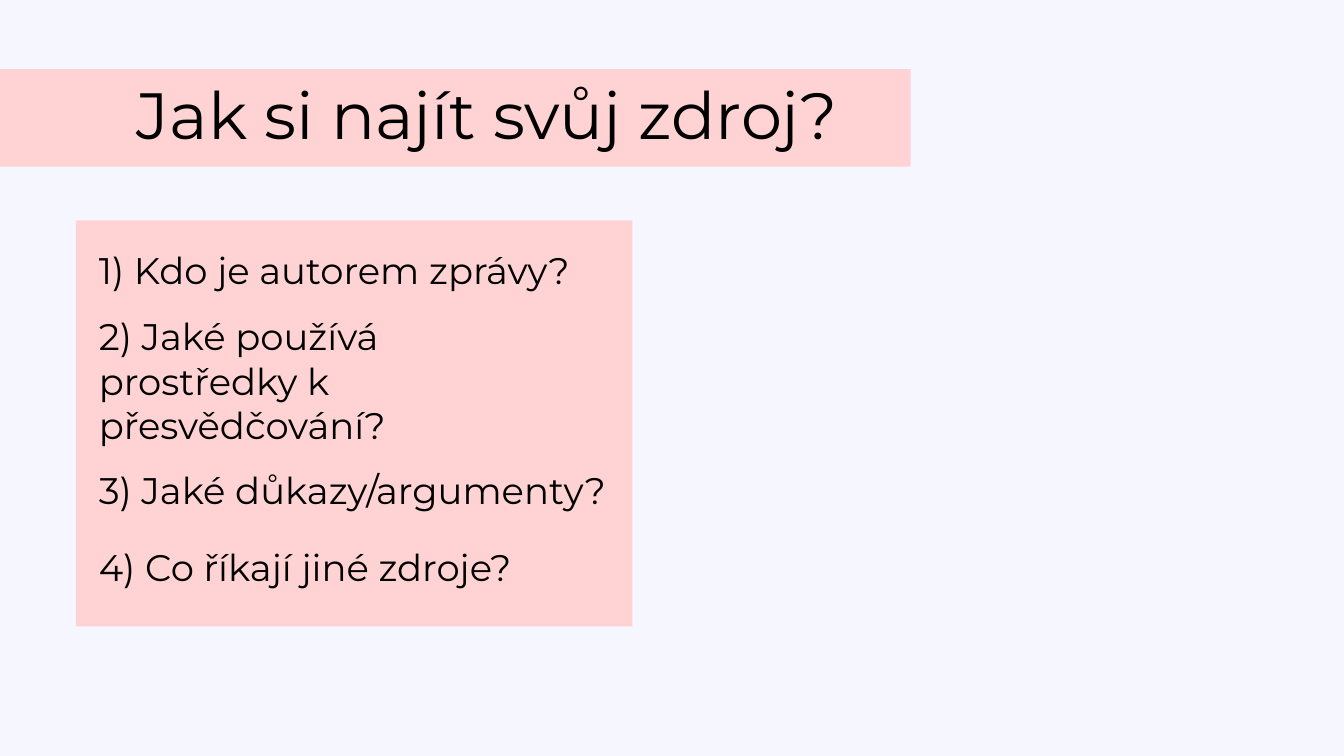
"""Builds a slide with four questions for judging a news source."""
from pptx import Presentation
from pptx import util as u
from pptx.dml.color import RGBColor
from pptx.enum import shapes, text

PAPER = RGBColor(0xF5, 0xF6, 0xFF)
PINK = RGBColor(0xFF, 0xD3, 0xD3)
INK = RGBColor(0x00, 0x00, 0x00)

COLUMNS, ROWS = 20, 11.25
QUESTION_COLUMN = 1.47
QUESTIONS = [
    ("1) Kdo je autorem zprávy?", 3.69, 7.32, 0.66),
    ("2) Jaké používá prostředky k přesvědčování?", 4.67, 6.37, 1.97),
    ("3) Jaké důkazy/argumenty?", 6.96, 7.79, 0.66),
    ("4) Co říkají jiné zdroje?", 8.1, 7.55, 0.66),
]


class SlideBuilder:
    """Holds the style and the current slide, on a grid of one-inch cells."""

    font = "Montserrat"
    cell = u.Inches(1)

    def __init__(self, deck):
        deck.slide_width, deck.slide_height = self.grid(COLUMNS, ROWS)
        self.slide = deck.slides.add_slide(deck.slide_layouts[5])
        background = self.slide.background.fill
        background.solid()
        background.fore_color.rgb = PAPER

    def grid(self, *cells):
        return [round(count * self.cell) for count in cells]

    def panel(self, *area):
        panel = self.slide.shapes.add_shape(
            shapes.MSO_SHAPE.RECTANGLE, *self.grid(*area))
        panel.shadow.inherit = False
        panel.fill.solid()
        panel.fill.fore_color.rgb = PINK
        panel.line.fill.background()
        return panel

    def wording(self, frame, words, size, leading, align):
        frame.margin_left = frame.margin_right = 0
        frame.margin_top = frame.margin_bottom = 0
        frame.word_wrap = True
        frame.auto_size = text.MSO_AUTO_SIZE.SHAPE_TO_FIT_TEXT
        frame.vertical_anchor = text.MSO_ANCHOR.TOP
        paragraph = frame.paragraphs[0]
        paragraph.alignment = align
        paragraph.line_spacing = u.Pt(leading)
        paragraph.space_before = u.Pt(0)
        run = paragraph.add_run()
        run.text = words
        run.font.name = self.font
        run.font.size = u.Pt(size)
        run.font.color.rgb = INK

    def title(self, words, band_area, title_area):
        heading = self.slide.shapes.title
        heading.left, heading.top, heading.width, heading.height = self.grid(*title_area)
        self.wording(heading.text_frame, words, 70, 84, text.PP_ALIGN.CENTER)
        heading.element.addprevious(self.panel(*band_area).element)

    def question(self, words, row, width, height):
        box = self.slide.shapes.add_textbox(
            *self.grid(QUESTION_COLUMN, row, width, height))
        self.wording(box.text_frame, words, 39.6, 47.5, text.PP_ALIGN.LEFT)


def main():
    deck = Presentation()
    builder = SlideBuilder(deck)
    builder.title("Jak si najít svůj zdroj?",
                  (0, 1.03, 13.55, 1.45), (1.12, 1.11, 12.26, 1.17))
    builder.panel(1.13, 3.28, 8.28, 6.04)
    for question in QUESTIONS:
        builder.question(*question)
    deck.save("out.pptx")


if __name__ == "__main__":
    main()
